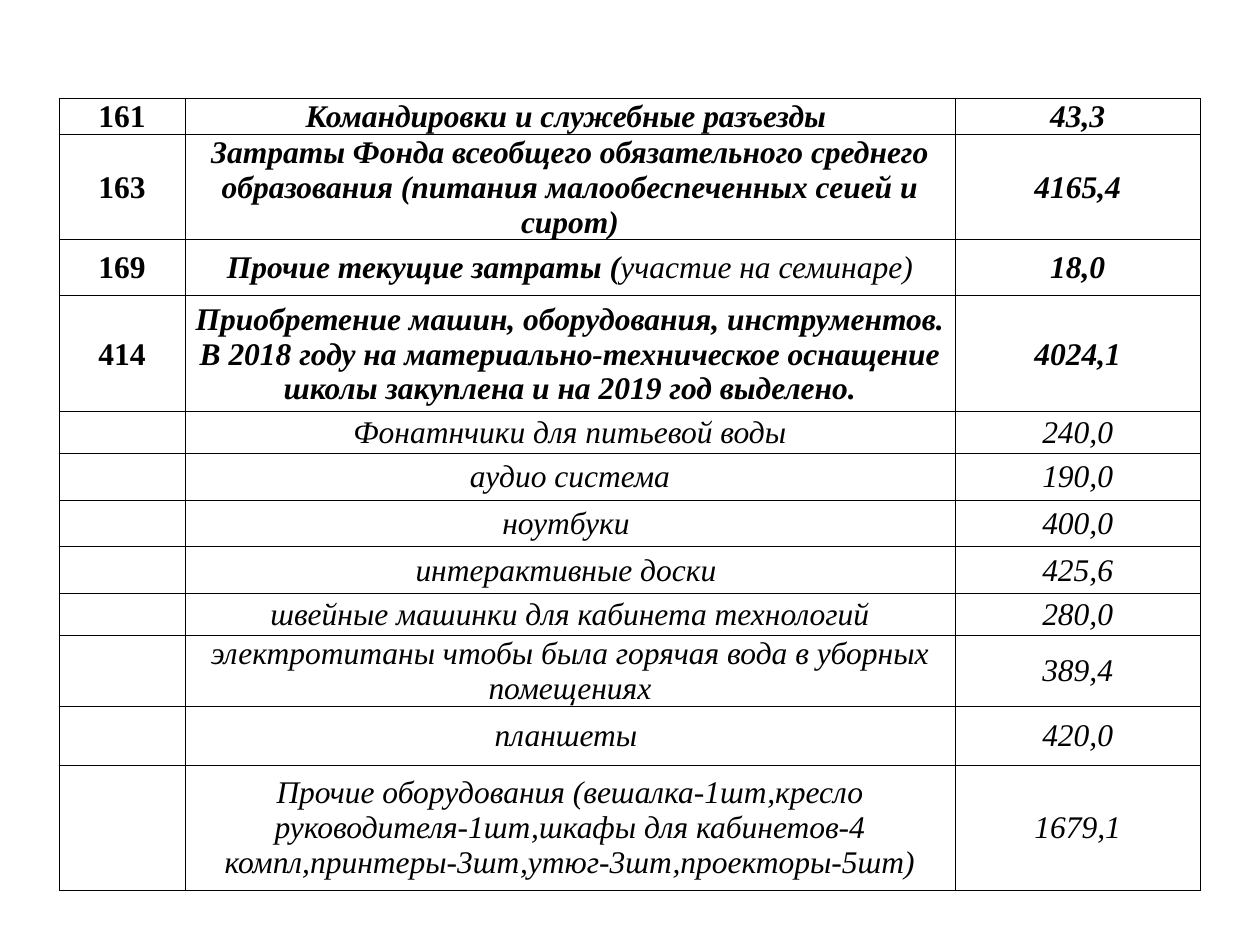
import pptx
import pptx.dml.color
import pptx.enum.text
import pptx.oxml
import pptx.oxml.ns
import pptx.util
from pptx.util import Cm

BLACK = pptx.dml.color.RGBColor(0x00, 0x00, 0x00)
WHITE = pptx.dml.color.RGBColor(0xFF, 0xFF, 0xFF)
FONT = "Times New Roman"

COLUMN_WIDTHS = [2.54, 15.52, 4.95]

EXPENSES = [
    (0.64, "161", "Командировки и служебные разъезды ", "43,3"),
    (1.75, "163", "Затраты Фонда всеобщего обязательного среднего образования "
     "(питания малообеспеченных сеией и сирот)", "4165,4"),
    (1.13, "169", "Прочие текущие затраты (|участие на семинаре)", "18,0"),
    (2.34, "414", "Приобретение машин, оборудования, инструментов. "
     "В 2018 году на материально-техническое оснащение школы закуплена "
     "и на 2019 год выделено.", "4024,1"),
    (0.83, "", "Фонатнчики для питьевой воды", "240,0"),
    (0.95, "", "аудио система", "190,0"),
    (0.93, "", "ноутбуки ", "400,0"),
    (0.95, "", "интерактивные доски ", "425,6"),
    (0.84, "", "швейные машинки для кабинета технологий", "280,0"),
    (1.2, "", "электротитаны чтобы была горячая вода в уборных помещениях", "389,4"),
    (1.19, "", "планшеты ", "420,0"),
    (2.52, "", "Прочие оборудования (вешалка-1шт,кресло руководителя-1шт,"
     "шкафы для кабинетов-4 компл,принтеры-3шт,утюг-3шт,проекторы-5шт)", "1679,1"),
]


def add_text(para, text, *, size=18, bold=False, italic=False, color=BLACK):
    span = para.add_run()
    span.text = text
    span.font.name = FONT
    span.font.size = pptx.util.Pt(size)
    span.font.bold = bold
    span.font.italic = italic
    span.font.color.rgb = color


class PageBuilder:
    def __init__(self, page, border_color=BLACK, border_width=0.5):
        self.page = page
        self.border_color = border_color
        self.border_width = pptx.util.Pt(border_width)

    def border(self, cell):
        properties = cell._tc.get_or_add_tcPr()
        for side in ("lnL", "lnR", "lnT", "lnB"):
            properties.append(pptx.oxml.parse_xml(
                f'<a:{side} {pptx.oxml.ns.nsdecls("a")} w="{self.border_width}">'
                f'<a:solidFill><a:srgbClr val="{self.border_color}"/></a:solidFill>'
                f'</a:{side}>'))

    def cell(self, cell, text, bold, italic, fill=None):
        self.border(cell)
        if fill is None:
            cell.fill.background()
        else:
            cell.fill.solid()
            cell.fill.fore_color.rgb = fill
        cell.margin_left = cell.margin_right = cell.margin_top = Cm(0.02)
        cell.margin_bottom = 0
        cell.vertical_anchor = pptx.enum.text.MSO_ANCHOR.MIDDLE
        para = cell.text_frame.paragraphs[0]
        para.alignment = pptx.enum.text.PP_ALIGN.CENTER
        if text:
            main, _, remark = text.partition("|")
            add_text(para, main, bold=bold, italic=italic)
            if remark:
                add_text(para, remark, italic=italic)

    def table(self, left, top, widths, rows):
        height = sum(row[0] for row in rows)
        table = self.page.shapes.add_table(
            len(rows), len(widths), Cm(left), Cm(top),
            Cm(sum(widths)), Cm(height)).table
        table.first_row = False
        table.horz_banding = False
        for column, width in zip(table.columns, widths):
            column.width = Cm(width)
        for line, (row_height, code, name, amount) in zip(table.rows, rows):
            line.height = Cm(row_height)
            bold = bool(code)
            code_cell, name_cell, amount_cell = line.cells
            self.cell(code_cell, code, bold, False)
            self.cell(name_cell, name, bold, True, WHITE)
            self.cell(amount_cell, amount, bold, True)


def main():
    deck = pptx.Presentation()
    deck.slide_width = Cm(25.4)
    deck.slide_height = Cm(19.05)
    page = deck.slides.add_slide(deck.slide_layouts[6])
    PageBuilder(page).table(1.19, 1.98, COLUMN_WIDTHS, EXPENSES)
    deck.save("out.pptx")


if __name__ == "__main__":
    main()
